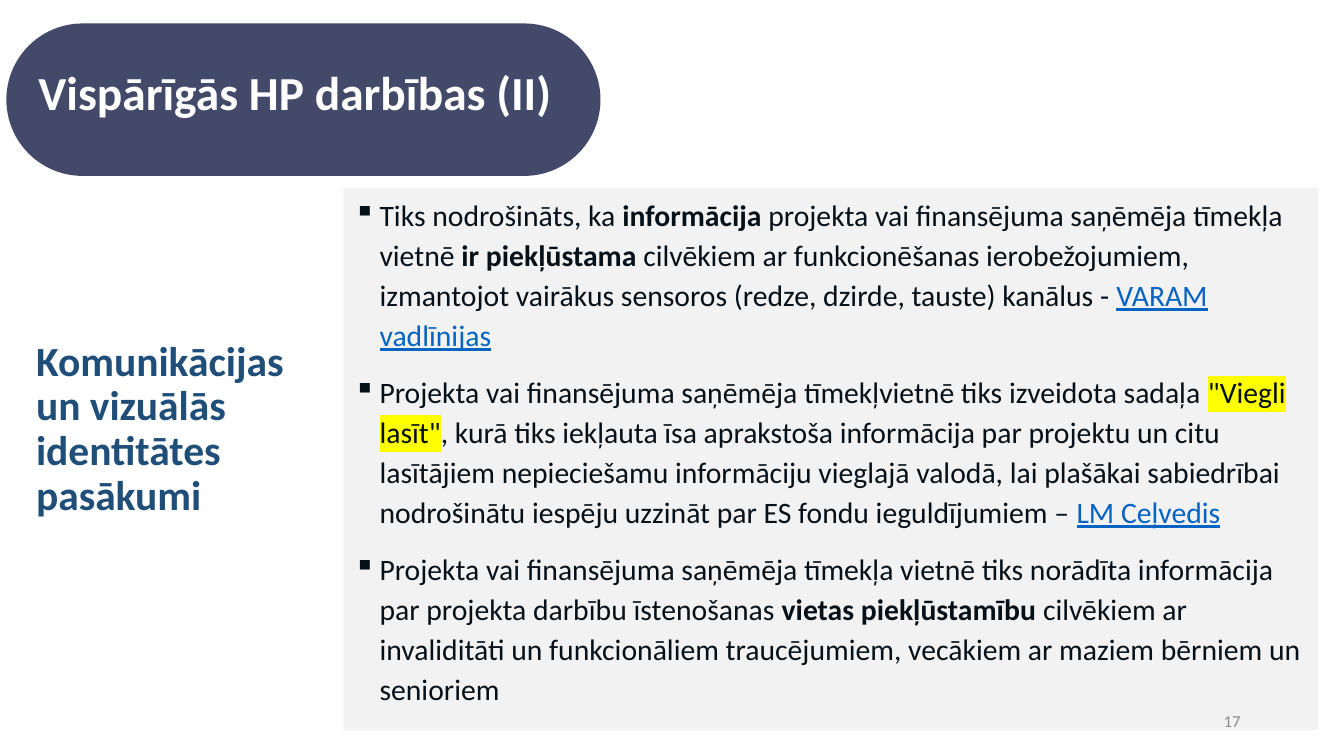
from lxml.etree import SubElement
from pptx import Presentation
from pptx.dml.color import RGBColor
from pptx.enum.shapes import MSO_SHAPE
from pptx.enum.text import MSO_ANCHOR, MSO_AUTO_SIZE, PP_ALIGN
from pptx.oxml.ns import qn
from pptx.util import Inches, Pt

COLORS = {
    "panel": "F2F2F2", "pill": "434968", "white": "FFFFFF", "ink": "061018",
    "link": "0563C1", "mark": "FFFF00", "navy": "1F4E79", "gray": "8C8C8C",
}
FONT = "Calibri"


def rgb(name):
    return RGBColor.from_string(COLORS[name])


def add_run(para, text, size=20, color="ink", bold=False, line=False, mark=None):
    run = para.add_run()
    run.text = text
    font = run.font
    font.size, font.bold, font.underline = Pt(size), bold, line
    font.color.rgb = rgb(color)
    if mark:
        light = SubElement(run._r.get_or_add_rPr(), qn("a:highlight"))
        SubElement(light, qn("a:srgbClr")).set("val", COLORS[mark])
    font.name = FONT


class Deck:
    def __init__(self, width, height):
        self.prs = Presentation()
        self.prs.slide_width, self.prs.slide_height = Inches(width), Inches(height)
        self.slide = self.prs.slides.add_slide(self.prs.slide_layouts[5])

    def place(self, shape, box):
        shape.left, shape.top, shape.width, shape.height = map(Inches, box)

    def frame(self, shape, anchor):
        frame = shape.text_frame
        frame.word_wrap = True
        frame.auto_size = MSO_AUTO_SIZE.NONE
        frame.vertical_anchor = anchor
        return frame

    def block(self, kind, box, fill):
        shape = self.slide.shapes.add_shape(kind, *map(Inches, box))
        shape.shadow.inherit = False
        shape.fill.solid()
        shape.fill.fore_color.rgb = rgb(fill)
        shape.line.fill.background()
        return shape

    def title(self, box, text, **style):
        shape = self.slide.shapes.title
        self.place(shape, box)
        para = self.frame(shape, MSO_ANCHOR.MIDDLE).paragraphs[0]
        para.alignment = PP_ALIGN.LEFT
        add_run(para, text, **style)
        # Bring the title in front of its pill
        shape.element.getparent().append(shape.element)

    def label(self, box, text, anchor, align=PP_ALIGN.LEFT, space=1.0, **style):
        shape = self.slide.shapes.add_textbox(*map(Inches, box))
        para = self.frame(shape, anchor).paragraphs[0]
        para.alignment, para.line_spacing = align, space
        add_run(para, text, **style)

    def bullets(self, shape, items):
        frame = self.frame(shape, MSO_ANCHOR.TOP)
        for i, runs in enumerate(items):
            para = frame.add_paragraph() if i else frame.paragraphs[0]
            para.alignment, para.line_spacing = PP_ALIGN.LEFT, 1.12
            para.space_before, para.space_after = Pt(6 if i else 0), Pt(6)
            props = para._p.get_or_add_pPr()
            props.set("marL", str(Inches(0.24)))
            props.set("indent", str(-Inches(0.24)))
            SubElement(props, qn("a:buChar")).set("char", "▪")
            for text, style in runs:
                add_run(para, text, **style)


PLAIN, BOLD = {}, {"bold": True}
LINK, MARK = {"color": "link", "line": True}, {"mark": "mark"}
ITEMS = [
    [("Tiks nodrošināts, ka ", PLAIN),
     ("informācija", BOLD),
     (" projekta vai finansējuma saņēmēja tīmekļa vietnē ", PLAIN),
     ("ir piekļūstama ", BOLD),
     ("cilvēkiem ar funkcionēšanas ierobežojumiem, izmantojot vairākus "
      "sensoros (redze, dzirde, tauste) kanālus - ", PLAIN),
     ("VARAM vadlīnijas", LINK)],
    [("Projekta vai finansējuma saņēmēja tīmekļvietnē tiks izveidota sadaļa ", PLAIN),
     ('"Viegli lasīt"', MARK),
     (", kurā tiks iekļauta īsa aprakstoša informācija par projektu un citu "
      "lasītājiem nepieciešamu informāciju vieglajā valodā, lai plašākai "
      "sabiedrībai nodrošinātu iespēju uzzināt par ES fondu ieguldījumiem – ", PLAIN),
     ("LM Ceļvedis", LINK)],
    [("Projekta vai finansējuma saņēmēja tīmekļa vietnē tiks norādīta "
      "informācija par projekta darbību īstenošanas ", PLAIN),
     ("vietas piekļūstamību ", BOLD),
     ("cilvēkiem ar invaliditāti un funkcionāliem traucējumiem, vecākiem ar "
      "maziem bērniem un senioriem", PLAIN)],
]


def main():
    deck = Deck(12.6, 7.09)

    # Panel with the planned actions
    panel = deck.block(MSO_SHAPE.RECTANGLE, (3.22, 1.76, 9.14, 5.09), "panel")
    deck.bullets(panel, ITEMS)

    # Title on its pill
    pill = deck.block(MSO_SHAPE.ROUNDED_RECTANGLE, (0.06, 0.22, 5.57, 1.43), "pill")
    pill.adjustments[0] = 0.5
    deck.title((0.26, 0.47, 5.07, 0.78), "Vispārīgās HP darbības (II)",
               size=32, color="white", bold=True)

    # Side heading and page number
    deck.label((0.24, 2.88, 2.67, 2.04),
               "Komunikācijas un vizuālās identitātes pasākumi",
               MSO_ANCHOR.BOTTOM, space=0.9, size=28, color="navy", bold=True)
    deck.label((8.9, 6.57, 2.83, 0.38), "17", MSO_ANCHOR.MIDDLE,
               align=PP_ALIGN.RIGHT, size=11.3, color="gray")

    deck.prs.save("out.pptx")


if __name__ == "__main__":
    main()
